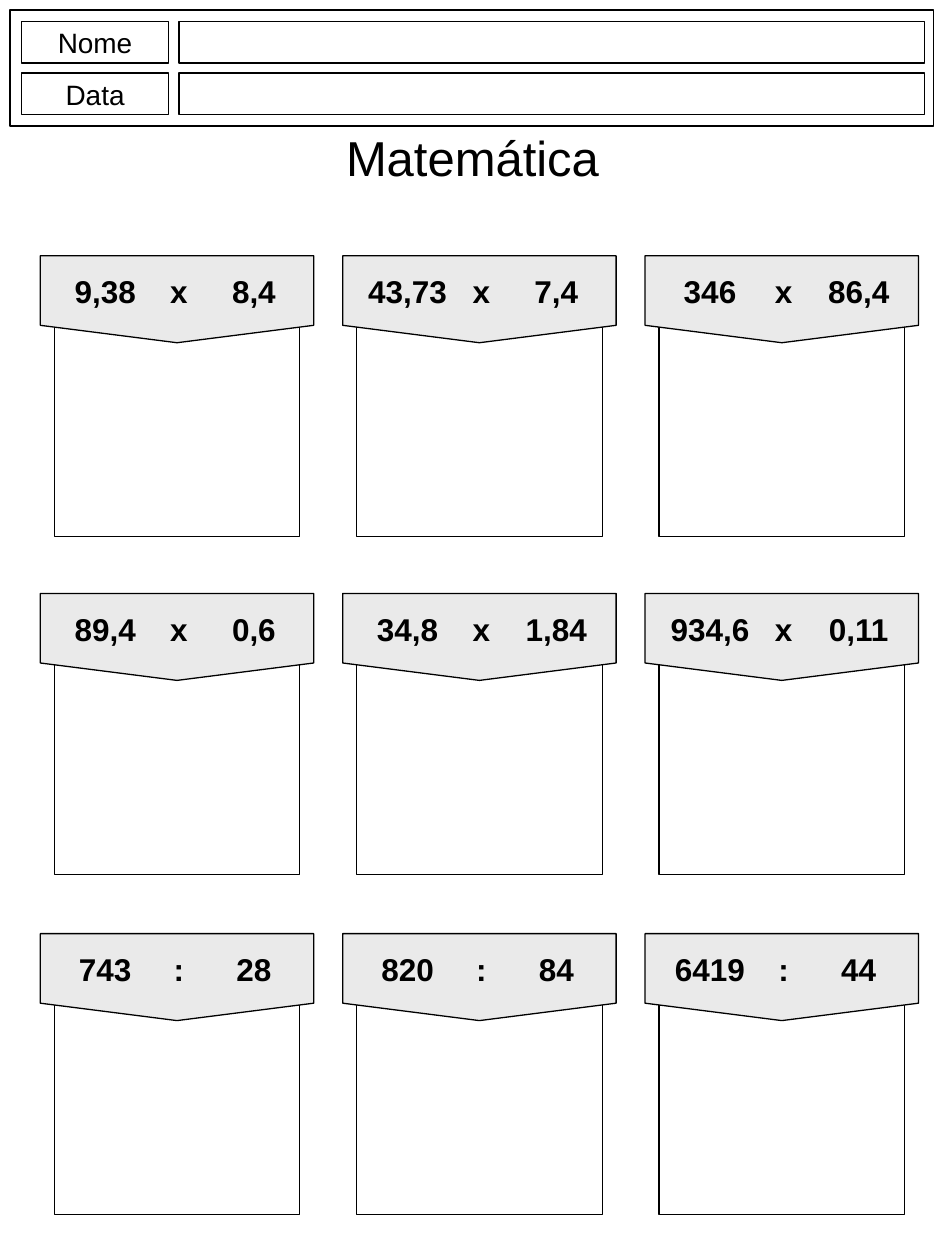
from pptx import Presentation
from pptx.dml.color import RGBColor
from pptx.enum.shapes import MSO_SHAPE
from pptx.enum.text import MSO_ANCHOR, PP_ALIGN
from pptx.util import Inches, Pt

TITLE = "Matemática"
FIELDS = ["Nome", "Data"]
EXERCISES = [
    [("9,38", "x", "8,4"), ("43,73", "x", "7,4"), ("346", "x", "86,4")],
    [("89,4", "x", "0,6"), ("34,8", "x", "1,84"), ("934,6", "x", "0,11")],
    [("743", ":", "28"), ("820", ":", "84"), ("6419", ":", "44")],
]

COLORS = {"ink": "000000", "paper": "FFFFFF", "banner": "EAEAEA"}
FONT = "Arial"
FIRST_COLUMN, COLUMN_STEP = 0.32, 2.4
ROW_TOPS = [2.03, 4.71, 7.41]
TERM_SLOTS = [(0.04, 0.95), (0.83, 0.54), (1.22, 0.95)]


def write(shape, text, size, bold=False):
    frame = shape.text_frame
    frame.word_wrap = False
    frame.vertical_anchor = MSO_ANCHOR.MIDDLE
    paragraph = frame.paragraphs[0]
    paragraph.alignment = PP_ALIGN.CENTER
    span = paragraph.add_run()
    span.text = text
    span.font.name = FONT
    span.font.size = Pt(size)
    span.font.bold = bold
    span.font.color.rgb = RGBColor.from_string(COLORS["ink"])


def add_outline(page, left, top, width, height, fill=None, kind=MSO_SHAPE.RECTANGLE):
    shape = page.shapes.add_shape(kind, Inches(left), Inches(top), Inches(width), Inches(height))
    shape.shadow.inherit = False
    if fill:
        shape.fill.solid()
        shape.fill.fore_color.rgb = RGBColor.from_string(COLORS[fill])
    else:
        shape.fill.background()
    shape.line.color.rgb = RGBColor.from_string(COLORS["ink"])
    shape.line.width = Pt(0.75)
    return shape


def add_label(page, left, top, width, height, text, size, bold=False):
    box = page.shapes.add_textbox(Inches(left), Inches(top), Inches(width), Inches(height))
    write(box, text, size, bold)


def add_header(page):
    add_outline(page, 0.08, 0.08, 7.33, 0.92)
    for index, field in enumerate(FIELDS):
        top = 0.17 + index * 0.41
        write(add_outline(page, 0.17, top, 1.17, 0.33), field, 16)
        add_outline(page, 1.42, top, 5.92, 0.33)
    add_label(page, 2.55, 1.08, 2.4, 0.33, TITLE, 28)


def add_exercise(page, left, top, terms):
    add_outline(page, left + 0.11, top + 0.32, 1.95, 1.91, "paper")
    add_outline(page, left, top, 2.17, 0.69, "banner", MSO_SHAPE.FLOWCHART_OFFPAGE_CONNECTOR)
    for term, (offset, width) in zip(terms, TERM_SLOTS):
        add_label(page, left + offset, top, width, 0.56, term, 18, True)


def main():
    deck = Presentation()
    deck.slide_width, deck.slide_height = Inches(7.5), Inches(10)
    page = deck.slides.add_slide(deck.slide_layouts[6])
    add_header(page)
    for top, row in zip(ROW_TOPS, EXERCISES):
        for column, terms in enumerate(row):
            add_exercise(page, FIRST_COLUMN + column * COLUMN_STEP, top, terms)
    deck.save("out.pptx")


if __name__ == "__main__":
    main()
